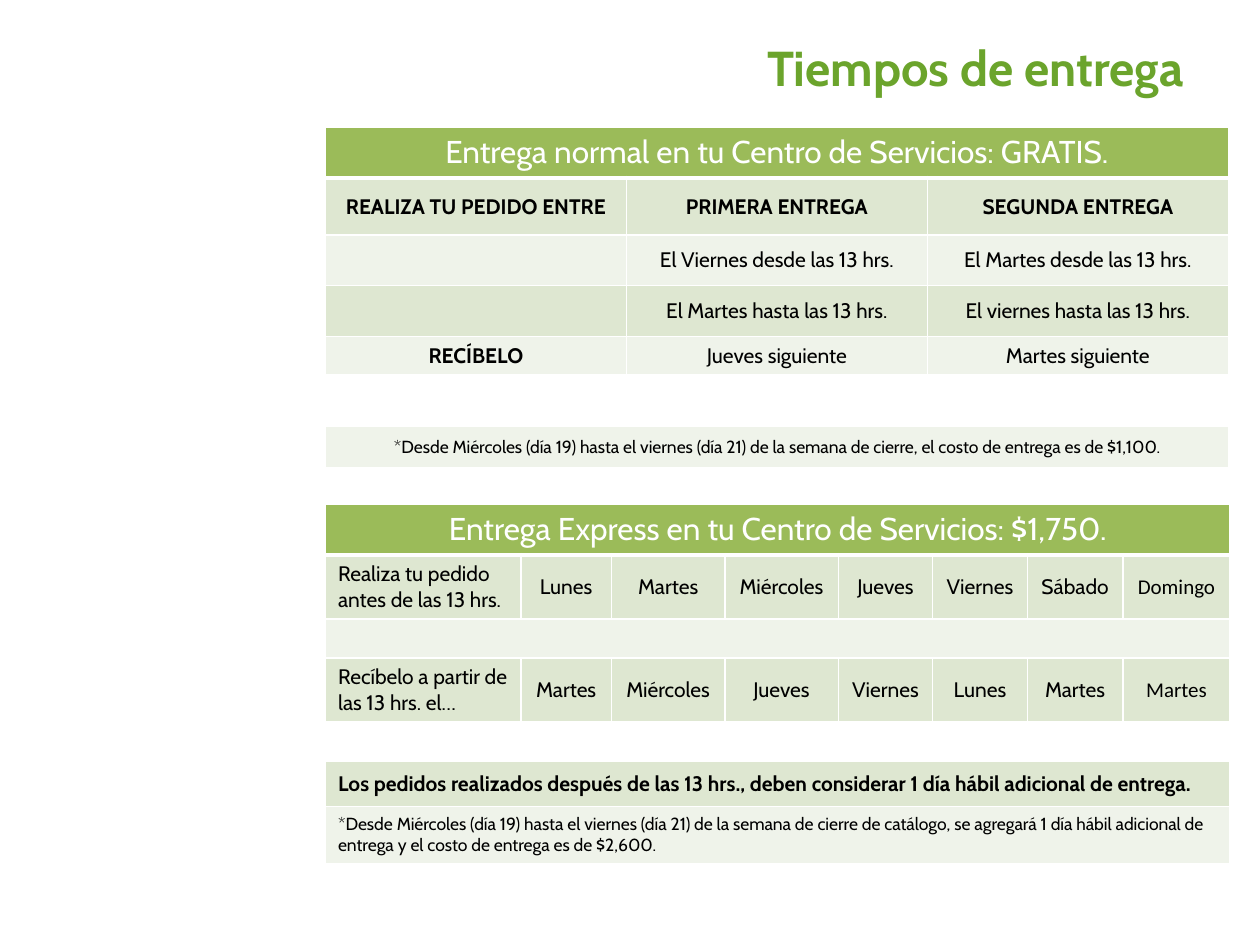
from dataclasses import dataclass

from lxml import etree
from pptx import Presentation
from pptx import util as u
from pptx.dml.color import RGBColor
from pptx.enum import text
from pptx.oxml import ns


@dataclass(frozen=True)
class Theme:
    title: str = "6BA42C"
    header: str = "9BBB59"
    dark_band: str = "DEE7D1"
    light_band: str = "EFF3EA"
    white: str = "FFFFFF"
    ink: str = "000000"
    font: str = "Cabin"
    other_font: str = "Calibri"
    title_size: int = 28
    header_size: int = 18
    body_size: int = 12
    note_size: int = 10


THEME = Theme()
LEFT, CENTER, RIGHT = text.PP_ALIGN.LEFT, text.PP_ALIGN.CENTER, text.PP_ALIGN.RIGHT


def write(frame, content, size=THEME.body_size, color=THEME.ink, bold=False,
          font=THEME.font, align=CENTER):
    """Write one paragraph for each line of content."""
    for index, line in enumerate(content.split("\n")):
        para = frame.paragraphs[0] if index == 0 else frame.add_paragraph()
        para.alignment = align
        if index == 0:
            para.space_before = u.Pt(0)
        span = para.add_run()
        span.text = line
        span.font.size = u.Pt(size)
        span.font.bold = bold
        span.font.name = font
        span.font.color.rgb = RGBColor.from_string(color)


class Builder:
    def __init__(self, theme, page):
        self.theme = theme
        self.page = page

    def title(self, content, left, top, width, height):
        box = self.page.shapes.title
        box.left, box.top = u.Pt(left), u.Pt(top)
        box.width, box.height = u.Pt(width), u.Pt(height)
        box.text_frame.vertical_anchor = text.MSO_ANCHOR.MIDDLE
        write(box.text_frame, content, size=self.theme.title_size,
              color=self.theme.title, bold=True, align=RIGHT)

    def border(self, cell, **widths):
        """Draw white cell borders; the sides come in schema order."""
        properties = cell._tc.get_or_add_tcPr()
        for side in ("L", "R", "T", "B"):
            line = etree.SubElement(properties, ns.qn(f"a:ln{side}"),
                                    w=str(u.Pt(widths.get(side, 1))))
            fill = etree.SubElement(line, ns.qn("a:solidFill"))
            etree.SubElement(fill, ns.qn("a:srgbClr"), val=self.theme.white)

    def table(self, left, top, widths, rows):
        """Each row is (height, fill, cells, format); one lone cell spans the row."""
        frame = self.page.shapes.add_table(
            len(rows), len(widths), u.Pt(left), u.Pt(top),
            u.Pt(sum(widths)), u.Pt(sum(row[0] for row in rows)))
        grid = frame.table
        grid.first_row = grid.horz_banding = False
        for column, width in zip(grid.columns, widths):
            column.width = u.Pt(width)
        for r, (height, fill, cells, style) in enumerate(rows):
            grid.rows[r].height = u.Pt(height)
            if len(cells) == 1:
                grid.cell(r, 0).merge(grid.cell(r, len(widths) - 1))
            for c in range(len(widths)):
                cell = grid.cell(r, c)
                self.border(cell, T=3 if r == 1 else 1, B=3 if r == 0 else 1)
                cell.fill.solid()
                cell.fill.fore_color.rgb = RGBColor.from_string(fill)
                cell.vertical_anchor = text.MSO_ANCHOR.MIDDLE
                entry = cells[c] if c < len(cells) else ""
                content, extra = entry if isinstance(entry, tuple) else (entry, {})
                if content:
                    write(cell.text_frame, content, **{**style, **extra})
                else:  # keep empty cells from stretching their row
                    etree.SubElement(cell.text_frame.paragraphs[0]._p,
                                     ns.qn("a:endParaRPr"),
                                     sz=str(self.theme.note_size * 100))


def main():
    deck = Presentation()
    deck.slide_width, deck.slide_height = u.Pt(720), u.Pt(540)
    page = deck.slides.add_slide(deck.slide_layouts[5])
    builder = Builder(THEME, page)
    dark, light = THEME.dark_band, THEME.light_band
    header = dict(size=THEME.header_size, color=THEME.white)
    strong, plain = dict(bold=True), {}
    left_side = dict(align=LEFT)
    calibri = dict(font=THEME.other_font)
    table_left = 186

    builder.title("Tiempos de entrega", 90, 16.5, 593.5, 43.5)

    # Normal delivery
    builder.table(table_left, 72.5, [172] * 3, [
        (28.5, THEME.header, ["Entrega normal en tu Centro de Servicios: GRATIS."], header),
        (32.5, dark, ["REALIZA TU PEDIDO ENTRE", "PRIMERA ENTREGA", "SEGUNDA ENTREGA"], strong),
        (29, light, ["", "El Viernes desde las 13 hrs.", "El Martes desde las 13 hrs."], plain),
        (29, dark, ["", "El Martes hasta las 13 hrs.", "El viernes hasta las 13 hrs."], plain),
        (22, light, [("RECÍBELO", strong), "Jueves siguiente", "Martes siguiente"], plain),
        (29.5, THEME.white, [""], plain),
        (23.5, light, ["*Desde Miércoles (día 19) hasta el viernes (día 21) de la semana "
                       "de cierre, el costo de entrega es de $1,100."],
         dict(size=THEME.note_size)),
    ])

    # Express delivery
    builder.table(table_left, 288, [111.6, 51.8, 64.8, 64.8, 54, 54, 54.7, 61.2], [
        (28.8, THEME.header, ["Entrega Express en tu Centro de Servicios: $1,750."], header),
        (36.4, dark, [("Realiza tu pedido\nantes de las 13 hrs.", left_side),
                      "Lunes", "Martes", "Miércoles", "Jueves", "Viernes", "Sábado",
                      ("Domingo", calibri)], plain),
        (22.2, light, [""], plain),
        (36.4, dark, [("Recíbelo a partir de las 13 hrs. el…", left_side),
                      "Martes", "Miércoles", "Jueves", "Viernes", "Lunes", "Martes",
                      ("Martes", calibri)], plain),
        (22.5, THEME.white, [""], plain),
        (26, dark, ["Los pedidos realizados después de las 13 hrs., deben considerar "
                    "1 día hábil adicional de entrega."], dict(bold=True, align=LEFT)),
        (32.4, light, ["*Desde Miércoles (día 19) hasta el viernes (día 21) de la semana "
                       "de cierre de catálogo, se agregará 1 día hábil adicional de "
                       "entrega y el costo de entrega es de $2,600."],
         dict(size=THEME.note_size, align=LEFT)),
    ])

    deck.save("out.pptx")


if __name__ == "__main__":
    main()
